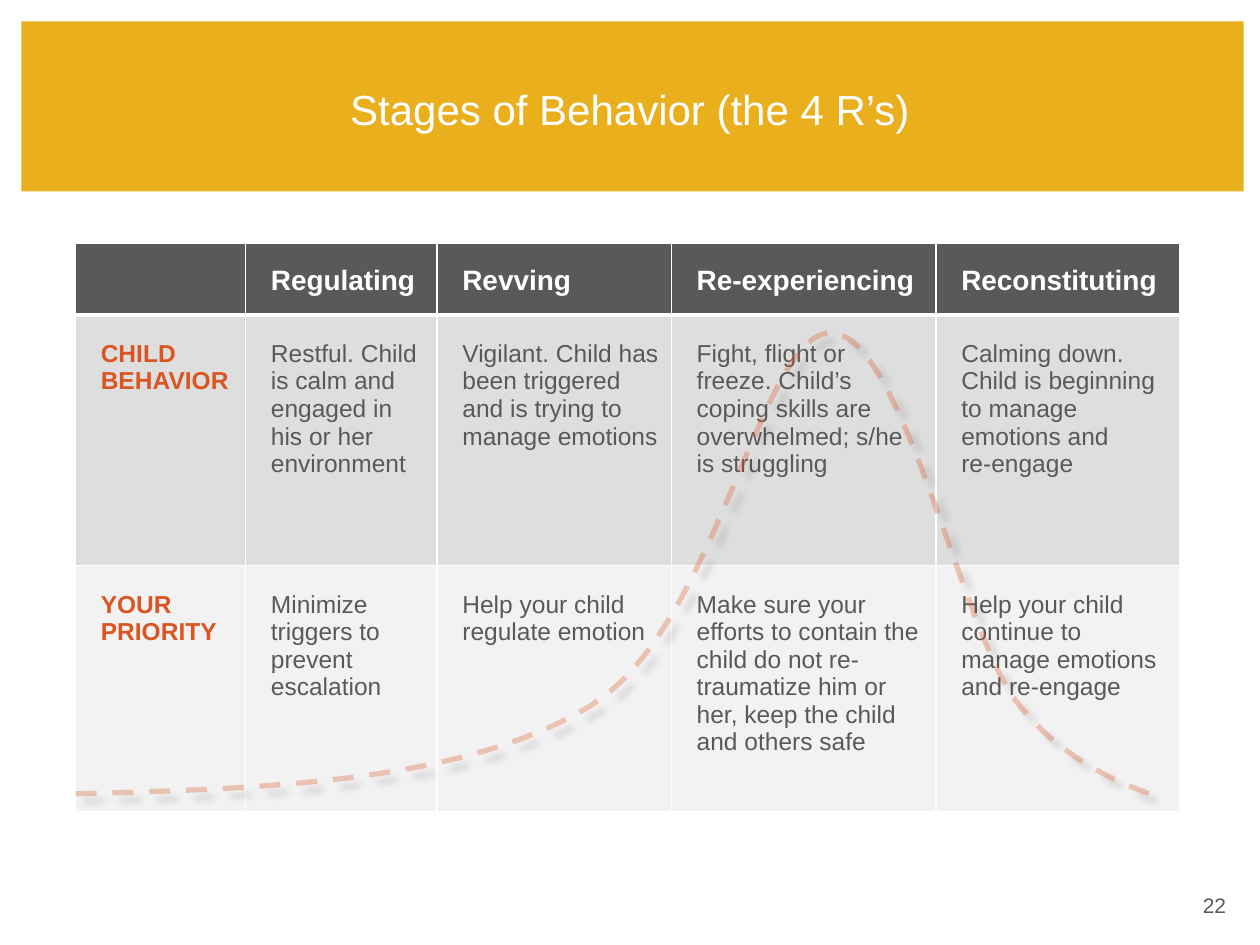
import pptx
import pptx.util
import pptx.dml.color
import pptx.enum.dml
import pptx.enum.shapes
import pptx.enum.text
import pptx.oxml
import pptx.oxml.ns

EMU_PER_PX = 9144  # 100 px to the inch
FONT = "Arial"
COLORS = {"white": "FFFFFF", "gold": "E9AF1D", "gray": "595959",
          "orange": "DA5521", "behavior": "DEDEDE", "priority": "F2F2F2",
          "shadow": "000000"}
ALIGN = pptx.enum.text.PP_ALIGN
ANCHOR = pptx.enum.text.MSO_ANCHOR

COLUMN_WIDTHS = [135, 152, 186, 210, 193]
ROW_HEIGHTS = [57, 199, 195]
ROW_FILLS = ["gray", "behavior", "priority"]
STAGES = [
    ["", "Regulating", "Revving", "Re-experiencing", "Reconstituting"],
    ["CHILD\nBEHAVIOR",
     "Restful. Child is calm and engaged in his or her environment",
     "Vigilant. Child has been triggered and is trying to manage emotions",
     "Fight, flight or freeze. Child’s coping skills are overwhelmed; s/he is struggling",
     "Calming down. Child is beginning to manage emotions and \vre-engage"],
    ["YOUR PRIORITY",
     "Minimize triggers to prevent escalation",
     "Help your child regulate emotion",
     "Make sure your efforts to contain the child do not re-traumatize him or her, "
     "keep the child and others safe",
     "Help your child continue to manage emotions and re-engage"],
]

# Bezier segments relative to the curve's box: two handles, then the end point.
CURVE_START = (0, 366)
CURVE_SEGMENTS = [
    [(151, 362), (309, 357), (409, 296)],
    [(509, 235), (543, 1), (599, 0)],
    [(655, -1), (701, 227), (744, 289)],
    [(788, 351), (863, 369), (863, 369)],
]
STEPS = 24


def px(length):
    return pptx.util.Emu(round(length * EMU_PER_PX))


def rgb(name):
    return pptx.dml.color.RGBColor.from_string(COLORS[name])


def format_text(frame, size, color, bold=False, align=ALIGN.LEFT):
    for para in frame.paragraphs:
        para.alignment = align
        for span in para.runs:
            span.font.name = FONT
            span.font.size = pptx.util.Pt(size)
            span.font.bold = bold
            span.font.color.rgb = rgb(color)


def add_label(page, box, text, size, color, align):
    label = page.shapes.add_textbox(*map(px, box))
    frame = label.text_frame
    frame.word_wrap = True
    frame.vertical_anchor = ANCHOR.MIDDLE
    frame.text = text
    format_text(frame, size, color, align=align)


def add_banner(page, box, title):
    left, top, width, height = box
    banner = page.shapes.add_shape(pptx.enum.shapes.MSO_SHAPE.RECTANGLE, *map(px, box))
    banner.shadow.inherit = False
    banner.fill.solid()
    banner.fill.fore_color.rgb = rgb("gold")
    banner.line.fill.background()
    title_box = (left + 33, top + 13, width - 70, height - 23)
    add_label(page, title_box, title, 24, "white", ALIGN.CENTER)


def set_borders(cell, widths):
    """Draw white borders; widths gives points for left, right, top, bottom."""
    properties = cell._tc.get_or_add_tcPr()
    for index, (side, points) in enumerate(zip("LRTB", widths)):
        border = pptx.oxml.parse_xml(
            f'<a:ln{side} {pptx.oxml.ns.nsdecls("a")} w="{pptx.util.Pt(points)}">'
            f'<a:solidFill><a:srgbClr val="{COLORS["white"]}"/></a:solidFill></a:ln{side}>')
        properties.insert(index, border)


def fill_cell(cell, text, row, column):
    is_header = row == 0
    cell.fill.solid()
    cell.fill.fore_color.rgb = rgb(ROW_FILLS[row])
    set_borders(cell, (1, 1, 3 if row == 1 else 1, 3 if is_header else 1))
    cell.margin_left, cell.margin_right = px(20), px(10)
    cell.margin_top, cell.margin_bottom = px(5 if is_header else 20), px(5)
    cell.text_frame.text = text
    if is_header:
        format_text(cell.text_frame, 16, "white", bold=True)
        for para in cell.text_frame.paragraphs:
            para.line_spacing = 1.5
            para.space_before = pptx.util.Pt(4)
    else:
        is_label = column == 0
        format_text(cell.text_frame, 14, "orange" if is_label else "gray", bold=is_label)


def add_stage_table(page, box):
    frame = page.shapes.add_table(len(ROW_HEIGHTS), len(COLUMN_WIDTHS), *map(px, box))
    table = frame.table
    for column, width in zip(table.columns, COLUMN_WIDTHS):
        column.width = px(width)
    for row, height in zip(table.rows, ROW_HEIGHTS):
        row.height = px(height)
    for row, texts in enumerate(STAGES):
        for column, text in enumerate(texts):
            fill_cell(table.cell(row, column), text, row, column)


def curve_points():
    """Sample the Bezier segments at equal steps."""
    start = CURVE_START
    for first, second, end in CURVE_SEGMENTS:
        for step in range(1, STEPS + 1):
            t = step / STEPS
            u = 1 - t
            weights = (u ** 3, 3 * u * u * t, 3 * u * t * t, t ** 3)
            corners = (start, first, second, end)
            yield tuple(sum(w * corner[axis] for w, corner in zip(weights, corners))
                        for axis in (0, 1))
        start = end


def add_intensity_curve(page, left, top):
    builder = page.shapes.build_freeform(*CURVE_START, scale=EMU_PER_PX / 100)
    builder = page.shapes.build_freeform(
        px(left + CURVE_START[0]), px(top + CURVE_START[1]))
    builder.add_line_segments(
        [(px(left + x), px(top + y)) for x, y in curve_points()], close=False)
    curve = builder.convert_to_shape()
    curve.fill.background()
    curve.line.color.rgb = rgb("orange")
    curve.line.width = pptx.util.Pt(3)
    curve.line.dash_style = pptx.enum.dml.MSO_LINE.DASH
    curve.shadow.inherit = False
    properties = curve._element.spPr
    namespace = pptx.oxml.ns.nsdecls("a")
    line_color = properties.find(".//" + pptx.oxml.ns.qn("a:srgbClr"))
    line_color.append(pptx.oxml.parse_xml(f'<a:alpha {namespace} val="30000"/>'))
    properties.find(pptx.oxml.ns.qn("a:effectLst")).append(pptx.oxml.parse_xml(
        f'<a:outerShdw {namespace} blurRad="{pptx.util.Pt(4)}" dist="{pptx.util.Pt(6)}" '
        f'dir="2700000" algn="tl" rotWithShape="0"><a:srgbClr val="{COLORS["shadow"]}">'
        '<a:alpha val="40000"/></a:srgbClr></a:outerShdw>'))


def main():
    deck = pptx.Presentation()
    deck.slide_width, deck.slide_height = px(1000), px(750)
    page = deck.slides.add_slide(deck.slide_layouts[6])
    add_banner(page, (17, 17, 970, 135), "Stages of Behavior (the 4 R’s)")
    add_label(page, (750, 702, 233, 32), "22", 12, "gray", ALIGN.RIGHT)
    add_stage_table(page, (60, 193, sum(COLUMN_WIDTHS), sum(ROW_HEIGHTS)))
    add_intensity_curve(page, 60, 264)
    deck.save("out.pptx")


if __name__ == "__main__":
    main()
